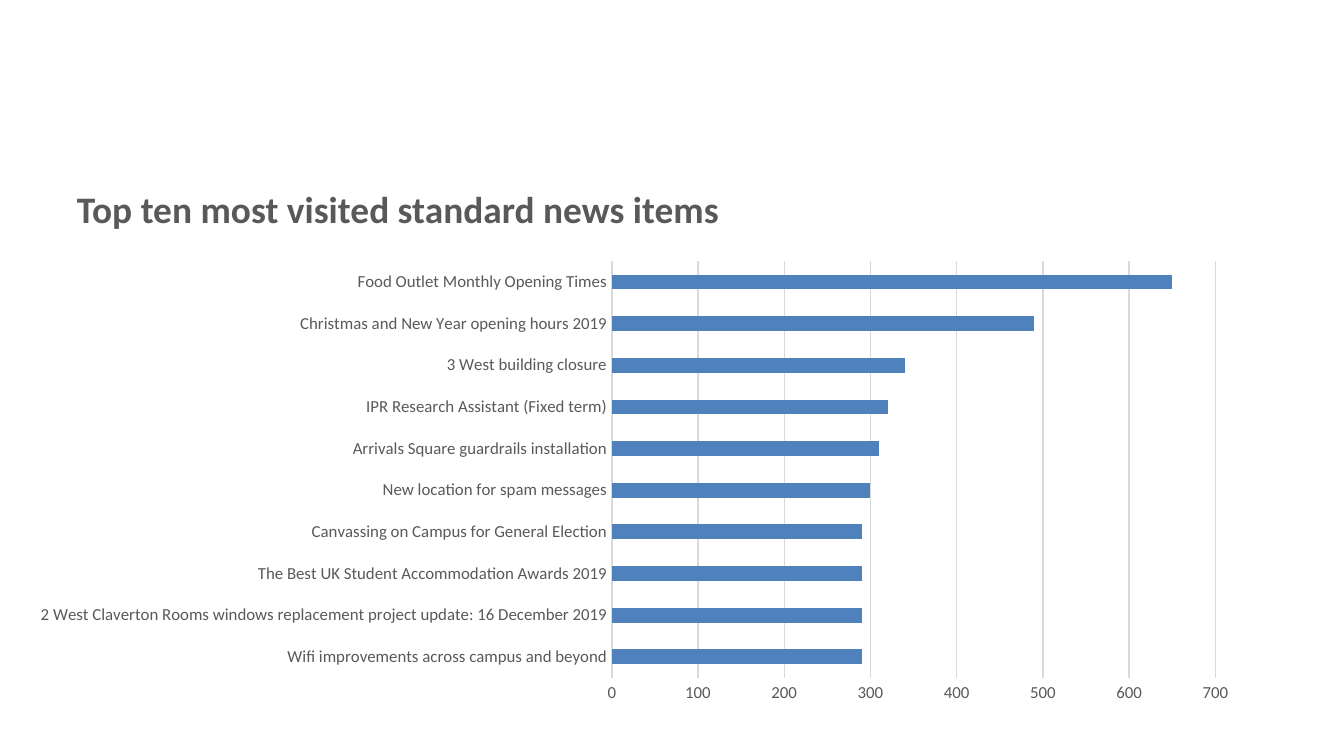
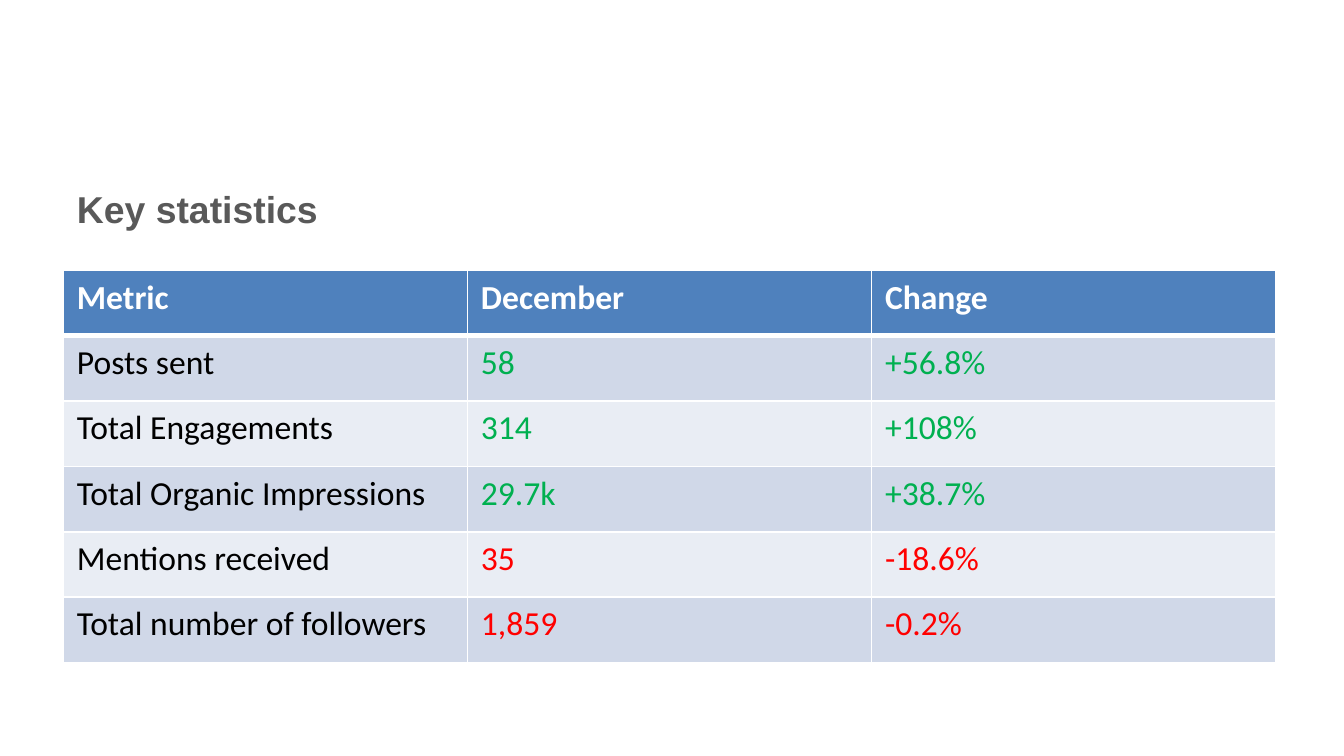
from dataclasses import dataclass

from lxml.etree import SubElement
from pptx import Presentation
from pptx.chart.data import CategoryChartData
from pptx.dml.color import RGBColor
from pptx.enum.chart import XL_CHART_TYPE as ChartType, XL_TICK_MARK as TickMark
from pptx.enum.text import MSO_ANCHOR as Anchor, MSO_AUTO_SIZE as AutoSize, PP_ALIGN as Align
from pptx.oxml import parse_xml
from pptx.oxml.ns import nsdecls, qn
from pptx.util import Pt

COLORS = {
    "heading": "595959",
    "accent": "4F81BD",
    "grid": "D9D9D9",
    "band_dark": "D0D8E8",
    "band_light": "E9EDF4",
    "white": "FFFFFF",
    "black": "000000",
    "rise": "00B050",
    "fall": "FF0000",
}
BODY_FONT = "Calibri"
TITLE_ONLY = 5


@dataclass
class Heading:
    text: str
    font: str
    width: float


@dataclass
class NewsItem:
    title: str
    visits: int


@dataclass
class Metric:
    name: str
    december: str
    change: str

    def color(self) -> str:
        return "rise" if self.change.startswith("+") else "fall"


NEWS_ITEMS = [
    NewsItem("Food Outlet Monthly Opening Times", 650),
    NewsItem("Christmas and New Year opening hours 2019", 490),
    NewsItem("3 West building closure", 340),
    NewsItem("IPR Research Assistant (Fixed term)", 320),
    NewsItem("Arrivals Square guardrails installation", 310),
    NewsItem("New location for spam messages", 300),
    NewsItem("Canvassing on Campus for General Election", 290),
    NewsItem("The Best UK Student Accommodation Awards 2019", 290),
    NewsItem("2 West Claverton Rooms windows replacement project update: 16 December 2019", 290),
    NewsItem("Wifi improvements across campus and beyond", 290),
]
METRICS = [
    Metric("Posts sent", "58", "+56.8%"),
    Metric("Total Engagements", "314", "+108%"),
    Metric("Total Organic Impressions", "29.7k", "+38.7%"),
    Metric("Mentions received", "35", "-18.6%"),
    Metric("Total number of followers", "1,859", "-0.2%"),
]


def rgb(name: str) -> RGBColor:
    return RGBColor.from_string(COLORS[name])


def set_font(font, name: str, size: float, color: str, bold: bool = False) -> None:
    font.name, font.size, font.bold = name, Pt(size), bold
    font.color.rgb = rgb(color)


def add_headed_slide(prs, heading: Heading):
    s = prs.slides.add_slide(prs.slide_layouts[TITLE_ONLY])
    sp = s.shapes.title
    sp.left, sp.top, sp.width, sp.height = Pt(34), Pt(96), Pt(heading.width), Pt(48)
    tf = sp.text_frame
    tf.text = heading.text
    tf.word_wrap, tf.auto_size, tf.vertical_anchor = True, AutoSize.NONE, Anchor.TOP
    p = tf.paragraphs[0]
    p.alignment = Align.LEFT
    set_font(p.font, heading.font, 20, "heading", True)
    return s


def place_plot(chart, x: float, y: float, w: float, h: float) -> None:
    area = chart._chartSpace.chart.plotArea
    for old in area.findall(qn("c:layout")):
        area.remove(old)
    values = {"layoutTarget": "inner", "xMode": "edge", "yMode": "edge",
              "x": x, "y": y, "w": w, "h": h}
    items = "".join(f'<c:{tag} val="{val}"/>' for tag, val in values.items())
    area.insert(0, parse_xml(
        f'<c:layout {nsdecls("c")}><c:manualLayout>{items}</c:manualLayout></c:layout>'))


def add_news_chart(s, items: list[NewsItem]) -> None:
    data = CategoryChartData()
    data.categories = [item.title for item in reversed(items)]
    data.add_series("Series 1", [item.visits for item in reversed(items)])
    chart = s.shapes.add_chart(
        ChartType.BAR_CLUSTERED, Pt(11), Pt(135), Pt(660), Pt(248), data).chart
    chart.has_legend = chart.has_title = False
    set_font(chart.font, BODY_FONT, 10, "black")

    plot = chart.plots[0]
    plot.gap_width, plot.vary_by_categories = 182, False
    fill = plot.series[0].format.fill
    fill.solid()
    fill.fore_color.rgb = rgb("accent")

    cat, val = chart.category_axis, chart.value_axis
    for axis in (cat, val):
        axis.major_tick_mark = axis.minor_tick_mark = TickMark.NONE
        set_font(axis.tick_labels.font, BODY_FONT, 9, "heading")
    val.minimum_scale, val.maximum_scale, val.major_unit = 0, 700, 100
    val.has_major_gridlines = True
    val.format.line.fill.background()
    for line in (cat.format.line, val.major_gridlines.format.line):
        line.width = Pt(0.75)
        line.color.rgb = rgb("grid")
    place_plot(chart, 0.48, 0.02, 0.49, 0.9)


def set_borders(cell, widths: dict[str, float]) -> None:
    props = cell._tc.get_or_add_tcPr()
    for i, (side, width) in enumerate(widths.items()):
        ln = props.makeelement(qn(f"a:ln{side}"), {"w": str(Pt(width))})
        fill = SubElement(ln, qn("a:solidFill"))
        SubElement(fill, qn("a:srgbClr"), val=COLORS["white"])
        props.insert(i, ln)


def add_metric_table(s, metrics: list[Metric]) -> None:
    rows = [[(text, "white") for text in ("Metric", "December", "Change")]]
    rows += [[(m.name, "black"), (m.december, m.color()), (m.change, m.color())]
             for m in metrics]
    table = s.shapes.add_table(
        len(rows), 3, Pt(34), Pt(145), Pt(649.5), Pt(35 * len(rows))).table
    for i, row in enumerate(rows):
        header = i == 0
        band = "accent" if header else "band_dark" if i % 2 else "band_light"
        for j, (text, color) in enumerate(row):
            cell = table.cell(i, j)
            cell.text = text
            cell.fill.solid()
            cell.fill.fore_color.rgb = rgb(band)
            set_font(cell.text_frame.paragraphs[0].font, BODY_FONT, 18, color, header)
            set_borders(cell, {"L": 1, "R": 1, "T": 3 if i == 1 else 1,
                               "B": 3 if header else 1})


def main() -> None:
    prs = Presentation()
    prs.slide_width, prs.slide_height = Pt(720), Pt(405)
    s = add_headed_slide(
        prs, Heading("Top ten most visited standard news items", BODY_FONT, 558))
    add_news_chart(s, NEWS_ITEMS)
    s = add_headed_slide(prs, Heading("Key statistics", "Arial", 475))
    add_metric_table(s, METRICS)
    prs.save("out.pptx")


if __name__ == "__main__":
    main()
